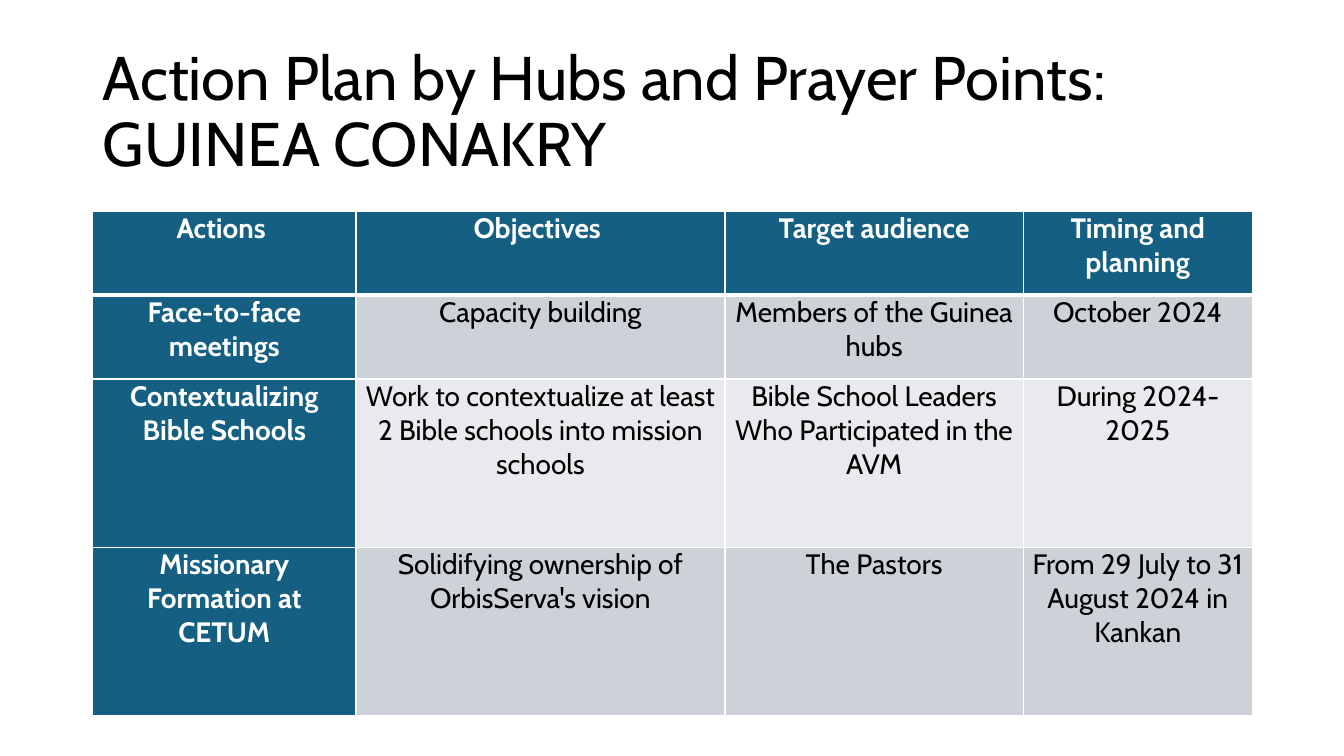
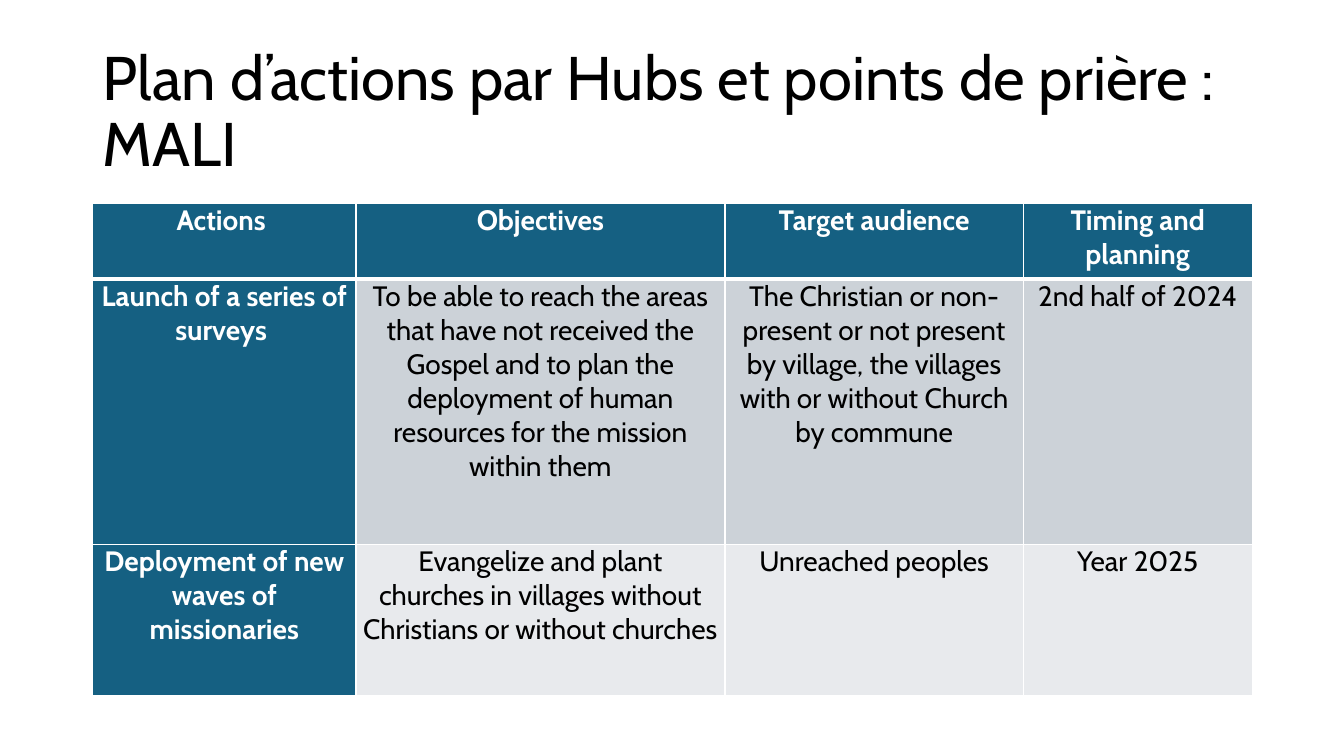
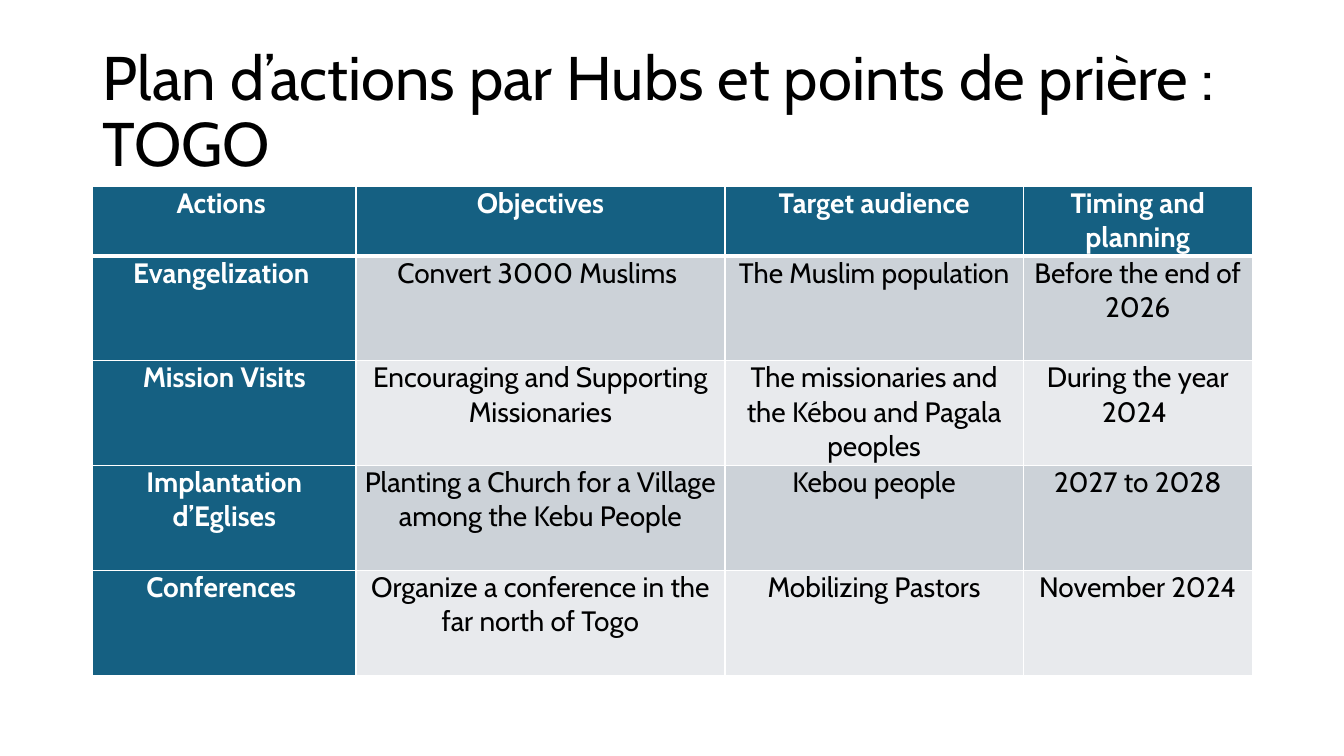
import dataclasses

import lxml.etree
import pptx
import pptx.dml.color
import pptx.enum.text
import pptx.oxml.ns
import pptx.util

Inches = pptx.util.Inches
Pt = pptx.util.Pt


@dataclasses.dataclass(frozen=True)
class Theme:
    font: str = "Cabin"
    title_size: int = 44
    table_size: int = 20
    dark: str = "000000"
    light: str = "FFFFFF"
    accent: str = "156082"
    bands: tuple = ("CCD2D8", "E8EAED")
    thin_line: int = 1
    thick_line: int = 3
    left: float = 0.92
    title_top: float = 0.4
    title_height: float = 1.45
    columns: tuple = (2.61, 3.66, 2.96, 2.27)
    cell_inset: float = 0.07


THEME = Theme()
TITLE_ONLY = 5
FRENCH_TITLE = "Plan d’actions par Hubs et points de prière : "
HEADER = ("Actions ", "Objectives", "Target audience", "Timing and planning")

PLANS = (
    {
        "title": "Action Plan by Hubs and Prayer Points: GUINEA CONAKRY",
        "top": 2.1,
        "row_heights": (0.83, 0.83, 1.67, 1.67),
        "rows": (
            ("Actions ", "Objectives ", "Target audience", "Timing and planning"),
            ("Face-to-face meetings", "Capacity building",
             "Members of the Guinea hubs", "October 2024"),
            ("Contextualizing Bible Schools",
             "Work to contextualize at least 2 Bible schools into mission schools",
             "Bible School Leaders Who Participated in the AVM",
             "During 2024-2025"),
            ("Missionary Formation at CETUM",
             "Solidifying ownership of OrbisServa's vision",
             "The Pastors", "From 29 July to 31 August 2024 in Kankan"),
        ),
    },
    {
        "title": FRENCH_TITLE + "MALI",
        "top": 2.02,
        "row_heights": (0.75, 2.63, 1.5),
        "rows": (
            HEADER,
            ("Launch of a series of surveys ",
             "To be able to reach the areas that have not received the Gospel "
             "and to plan the deployment of human resources for the mission within them",
             "The Christian or non-present or not present by village, "
             "the villages with or without Church by commune",
             "2nd half of 2024"),
            ("Deployment of new waves of missionaries",
             "Evangelize and plant churches in villages without Christians "
             "or without churches",
             "Unreached peoples", "Year 2025"),
        ),
    },
    {
        "title": FRENCH_TITLE + "TOGO",
        "top": 1.85,
        "row_heights": (0.69, 1.04, 1.04, 1.04, 1.04),
        "rows": (
            HEADER,
            ("Evangelization ", "Convert 3000 Muslims ",
             "The Muslim population", "Before the end of 2026"),
            ("Mission Visits", "Encouraging and Supporting Missionaries",
             "The missionaries and the Kébou and Pagala peoples",
             "During the year 2024 "),
            ("Implantation d’Eglises",
             "Planting a Church for a Village among the Kebu People",
             "Kebou people", "2027 to 2028"),
            ("Conferences ", "Organize a conference in the far north of Togo",
             "Mobilizing Pastors", "November 2024"),
        ),
    },
)


def rgb(value):
    return pptx.dml.color.RGBColor.from_string(value)


def add_span(para, text, size, color, bold=False):
    span = para.add_run()
    span.text = text
    span.font.name = THEME.font
    span.font.size = Pt(size)
    span.font.bold = bold
    span.font.color.rgb = rgb(color)


def format_title(page, text):
    box = page.shapes.title
    box.left, box.top = Inches(THEME.left), Inches(THEME.title_top)
    box.width, box.height = Inches(sum(THEME.columns)), Inches(THEME.title_height)
    frame = box.text_frame
    frame.word_wrap = True
    frame.auto_size = pptx.enum.text.MSO_AUTO_SIZE.NONE
    frame.vertical_anchor = pptx.enum.text.MSO_ANCHOR.MIDDLE
    para = frame.paragraphs[0]
    para.alignment = pptx.enum.text.PP_ALIGN.LEFT
    para.line_spacing = 0.9
    add_span(para, text, THEME.title_size, THEME.dark)


def set_borders(cell, top, bottom):
    """Draw light borders; must run before the cell's fill is set."""
    qn = pptx.oxml.ns.qn
    properties = cell._tc.get_or_add_tcPr()
    widths = {"L": THEME.thin_line, "R": THEME.thin_line, "T": top, "B": bottom}
    for side, width in widths.items():
        line = lxml.etree.SubElement(properties, qn(f"a:ln{side}"), w=str(Pt(width)))
        fill = lxml.etree.SubElement(line, qn("a:solidFill"))
        lxml.etree.SubElement(fill, qn("a:srgbClr"), val=THEME.light)


def format_cell(cell, text, row, column):
    is_heading = row == 0 or column == 0
    set_borders(
        cell,
        top=THEME.thick_line if row == 1 else THEME.thin_line,
        bottom=THEME.thick_line if row == 0 else THEME.thin_line,
    )
    cell.fill.solid()
    band = THEME.bands[(row - 1) % len(THEME.bands)]
    cell.fill.fore_color.rgb = rgb(THEME.accent if is_heading else band)
    cell.margin_left = cell.margin_right = Inches(THEME.cell_inset)
    cell.margin_top = cell.margin_bottom = 0
    para = cell.text_frame.paragraphs[0]
    para.alignment = pptx.enum.text.PP_ALIGN.CENTER
    color = THEME.light if is_heading else THEME.dark
    add_span(para, text, THEME.table_size, color, is_heading)


def add_plan_table(page, top, row_heights, rows):
    table = page.shapes.add_table(
        len(rows), len(THEME.columns), Inches(THEME.left), Inches(top),
        Inches(sum(THEME.columns)), Inches(sum(row_heights)),
    ).table
    table.first_col = True
    for column, width in zip(table.columns, THEME.columns):
        column.width = Inches(width)
    for row, height in zip(table.rows, row_heights):
        row.height = Inches(height)
    for row, texts in enumerate(rows):
        for column, text in enumerate(texts):
            format_cell(table.cell(row, column), text, row, column)


def main():
    deck = pptx.Presentation()
    deck.slide_width, deck.slide_height = Inches(13.33), Inches(7.5)
    for plan in PLANS:
        page = deck.slides.add_slide(deck.slide_layouts[TITLE_ONLY])
        format_title(page, plan["title"])
        add_plan_table(page, plan["top"], plan["row_heights"], plan["rows"])
    deck.save("out.pptx")


if __name__ == "__main__":
    main()
